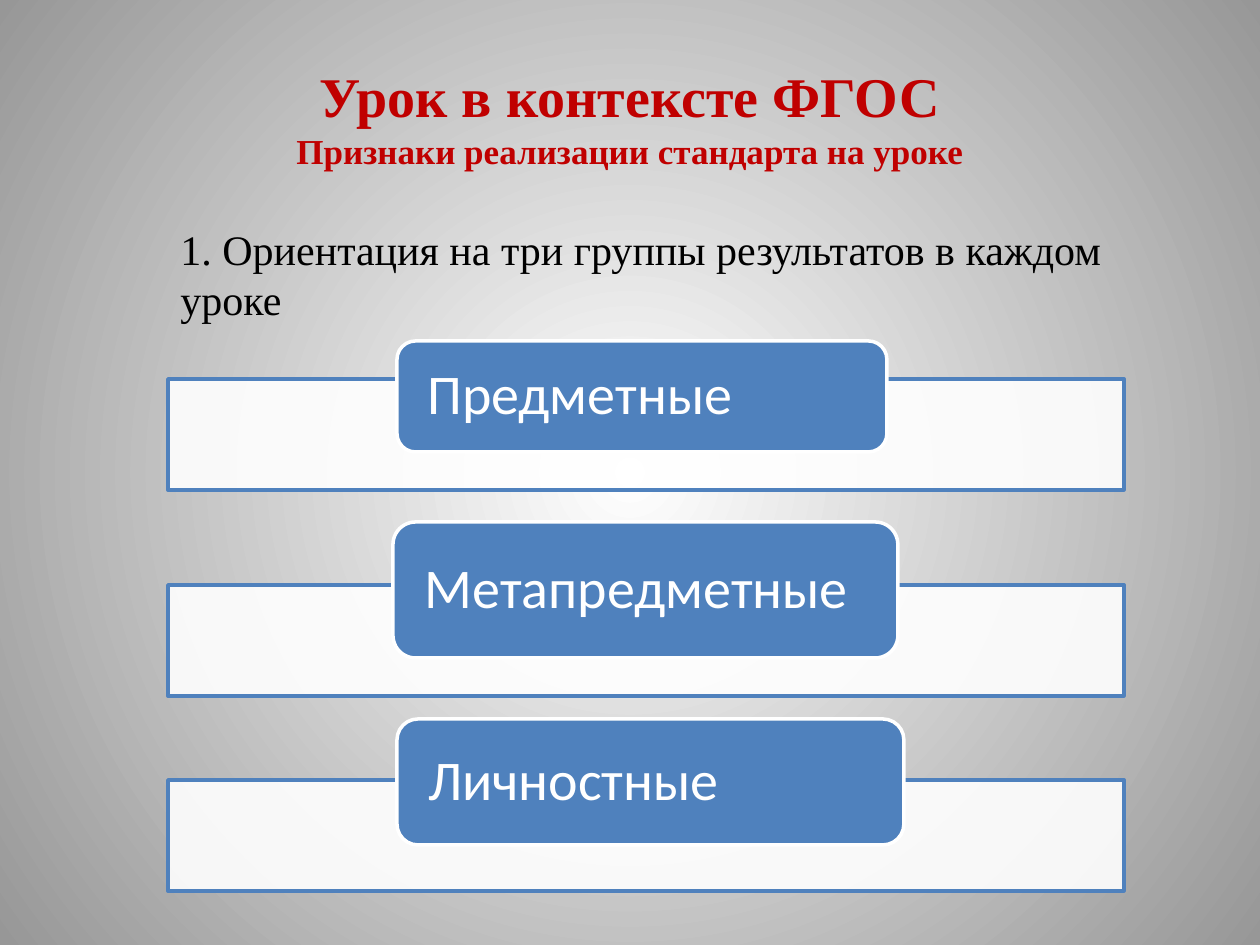
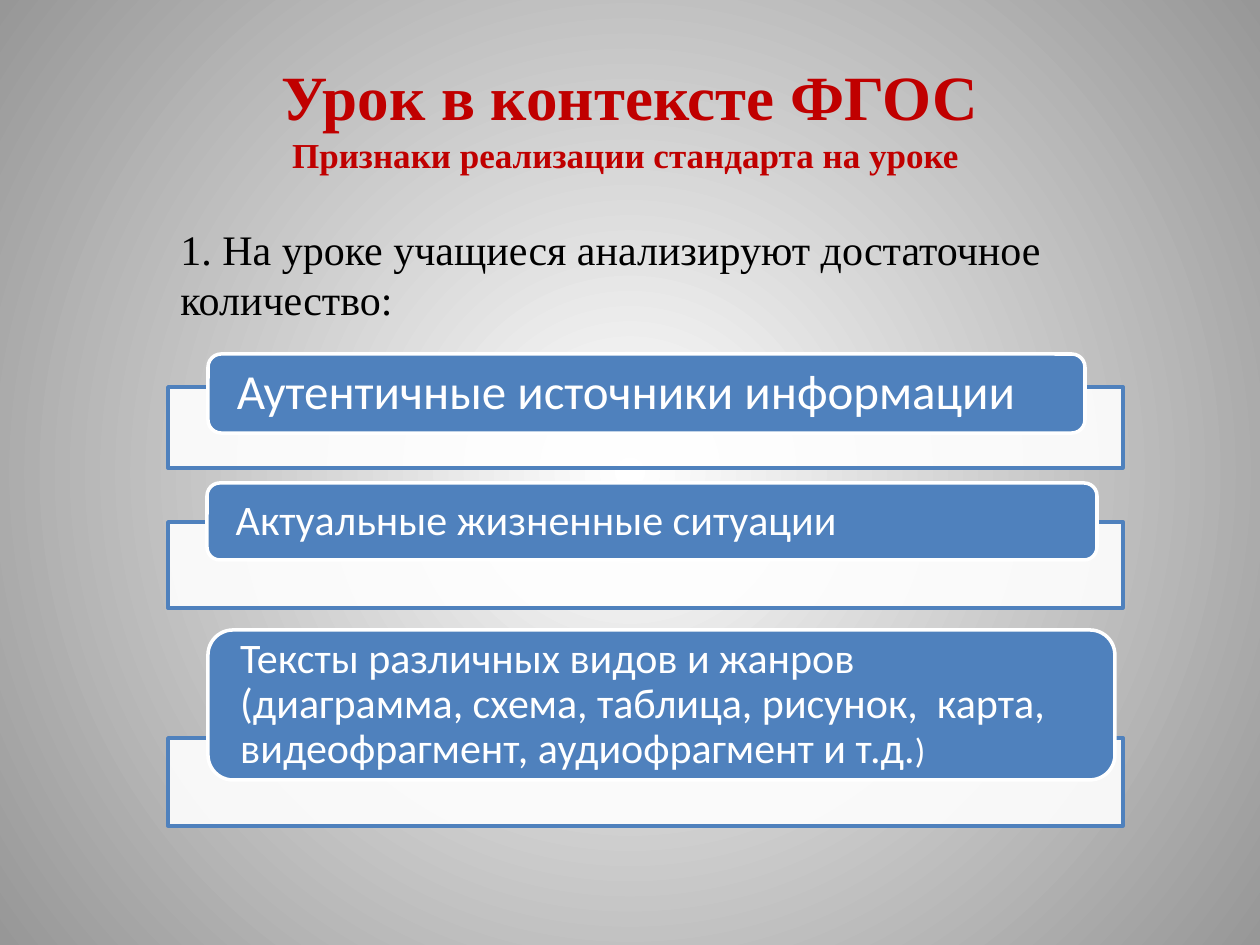
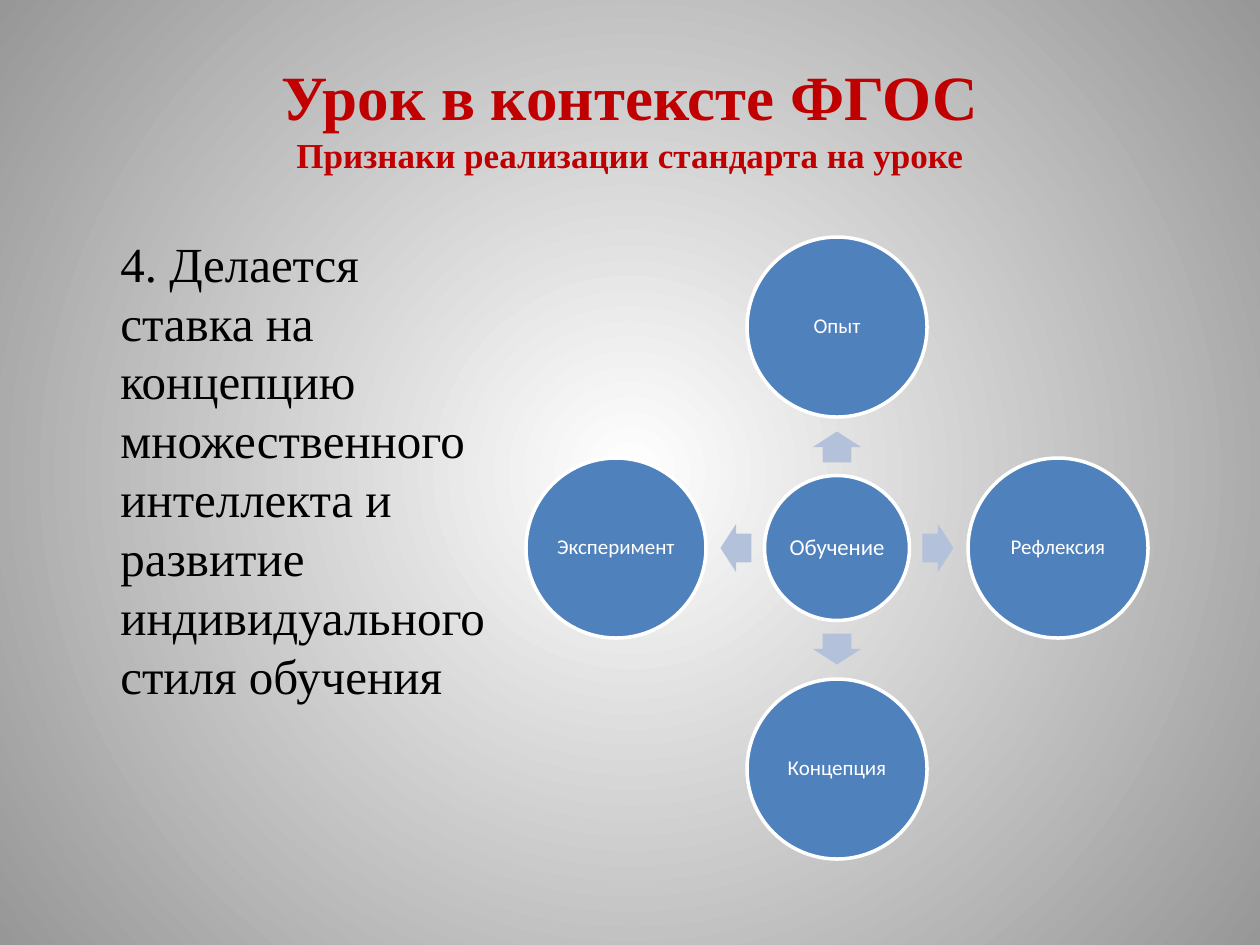
"""Build three slides on the signs of the standard in a lesson."""
from copy import deepcopy
from pptx import Presentation
from pptx.dml.color import RGBColor
from pptx.enum.shapes import MSO_SHAPE
from pptx.enum.text import MSO_ANCHOR, PP_ALIGN
from pptx.oxml.ns import qn
from pptx.util import Pt
from lxml import etree

RECT, ROUND = MSO_SHAPE.RECTANGLE, MSO_SHAPE.ROUNDED_RECTANGLE
OVAL, ARROW = MSO_SHAPE.OVAL, MSO_SHAPE.RIGHT_ARROW
LEFT, CENTER = PP_ALIGN.LEFT, PP_ALIGN.CENTER
TOP, MIDDLE = MSO_ANCHOR.TOP, MSO_ANCHOR.MIDDLE
PX = 914400 / 126
SERIF, SANS = "Times New Roman", "Calibri"
COLORS = {"white": "FFFFFF", "edge": "979797", "red": "C00000",
          "blue": "4F81BD", "pale": "B3C1DB", "black": "000000"}

HEAD = "Урок в контексте ФГОС"
SUB = "Признаки реализации стандарта на уроке"
LISTS = [
    {"title": [(HEAD, 32), (SUB, 20)],
     "lead": "1. Ориентация на три группы результатов в каждом уроке",
     "width": 956,
     "rows": [
         ((379, 111), (397, 341, 490, 111), [("Предметные", 32)]),
         ((585, 111), (393, 522, 505, 136), [("Метапредметные", 32)]),
         ((780, 111), (397, 719, 507, 126), [("Личностные", 32)])]},
    {"title": [(HEAD, 36), (SUB + " ", 20)],
     "lead": "1. На уроке учащиеся анализируют достаточное количество:",
     "width": 955,
     "rows": [
         ((387, 81), (208, 354, 877, 79),
          [("Аутентичные источники информации", 28)]),
         ((522, 86), (207, 483, 890, 77),
          [("Актуальные жизненные ситуации", 24)]),
         ((738, 88), (208, 630, 907, 150),
          [("Тексты различных видов и жанров (диаграмма, схема, таблица, "
            "рисунок,  карта, видеофрагмент, аудиофрагмент и т.д.", 24),
           (")", 20)])]},
]
CYCLE = {
    "title": [(HEAD, 36), (SUB, 20)],
    "lead": "4. Делается ставка на концепцию множественного интеллекта "
            "и развитие индивидуального стиля обучения",
    "hub": "Обучение",
    "nodes": [("Опыт", 0, -1, 270), ("Рефлексия", 1, 0, 0),
              ("Концепция", 0, 1, 90), ("Эксперимент", -1, 0, 180)],
}
HUB_X, HUB_Y, HUB_D = 837, 548, 145
NODE_D, NODE_GAP = 180, 221
ARROW_W, ARROW_H, ARROW_GAP = 31, 48, 101


def rgb(name):
    """Return a named colour."""
    return RGBColor.from_string(COLORS[name])


def emu(*vals):
    """Turn px lengths into EMU."""
    return [round(v * PX) for v in vals]


def write(shape, runs, font=SANS, color="white", bold=False, align=LEFT,
          anchor=MIDDLE, pads=None, space=None, split=False):
    """Fill a shape with runs of (text, size), split into lines if asked."""
    frame = shape.text_frame
    frame.word_wrap = True
    frame.vertical_anchor = anchor
    if pads:
        (frame.margin_left, frame.margin_top,
         frame.margin_right, frame.margin_bottom) = emu(*pads)
    para = frame.paragraphs[0]
    para.alignment = align
    if space:
        para.line_spacing = space
    for i, (text, size) in enumerate(runs):
        run = para.add_run()
        run.text = text
        run.font.size = Pt(size)
        run.font.name = font
        run.font.bold = bold
        run.font.color.rgb = rgb(color)
        if split and i < len(runs) - 1:
            para.add_line_break()
            para._p[-1].append(deepcopy(run._r.rPr))


def draw(slide, kind, box, fill, line=None, alpha=None):
    """Add a flat preset shape."""
    shape = slide.shapes.add_shape(kind, *emu(*box))
    shape.shadow.inherit = False
    shape.fill.solid()
    shape.fill.fore_color.rgb = rgb(fill)
    if alpha:
        tint = shape._element.spPr.find(".//" + qn("a:srgbClr"))
        etree.SubElement(tint, qn("a:alpha"), val=str(alpha * 1000))
    if line:
        shape.line.color.rgb = rgb(line)
        shape.line.width = Pt(2)
    else:
        shape.line.fill.background()
    return shape


def disc(slide, x, y, size, text, points):
    """Add a labelled circle around a centre."""
    box = (x - size / 2, y - size / 2, size, size)
    shape = draw(slide, OVAL, box, "blue", "white")
    write(shape, [(text, points)], align=CENTER, pads=(2, 2, 2, 2), space=0.9)


def start(prs, data, box, size):
    """Add a slide with its title and lead text."""
    slide = prs.slides.add_slide(prs.slide_layouts[5])
    title = slide.shapes.title
    title.left, title.top, title.width, title.height = emu(63, 38, 1134, 157)
    write(title, data["title"], font=SERIF, color="red", bold=True,
          align=CENTER, split=True)
    lead = slide.shapes.add_textbox(*emu(*box))
    write(lead, [(data["lead"], size)], font=SERIF, color="black", anchor=TOP)
    return slide


def paint(master):
    """Give the master a round gradient."""
    fill = master.background.fill
    fill.gradient()
    for stop, name in zip(fill.gradient_stops, ("white", "edge")):
        stop.color.rgb = rgb(name)
    grad = master._element.find(".//" + qn("a:gradFill"))
    grad.remove(grad.find(qn("a:lin")))
    ring = etree.SubElement(grad, qn("a:path"))
    ring.set("path", "circle")
    etree.SubElement(ring, qn("a:fillToRect"),
                     {side: "50000" for side in "ltrb"})


def main():
    """Build and save the slides."""
    prs = Presentation()
    prs.slide_width, prs.slide_height = emu(1260, 945)
    paint(prs.slide_master)

    for data in LISTS:
        slide = start(prs, data, (168, 217, 955, 115), 24)
        for (top, high), tab, runs in data["rows"]:
            draw(slide, RECT, (168, top, data["width"], high),
                 "white", "blue", alpha=90)
            label = draw(slide, ROUND, tab, "blue", "white")
            write(label, runs, pads=(25, 0, 25, 0), space=0.9)

    slide = start(prs, CYCLE, (108, 227, 394, 488), 28)
    disc(slide, HUB_X, HUB_Y, HUB_D, CYCLE["hub"], 13)
    for text, dx, dy, turn in CYCLE["nodes"]:
        x = HUB_X + dx * ARROW_GAP - ARROW_W / 2
        y = HUB_Y + dy * ARROW_GAP - ARROW_H / 2
        arrow = draw(slide, ARROW, (x, y, ARROW_W, ARROW_H), "pale")
        arrow.adjustments[0], arrow.adjustments[1] = 0.6, 0.5
        arrow.rotation = turn
        disc(slide, HUB_X + dx * NODE_GAP, HUB_Y + dy * NODE_GAP,
             NODE_D, text, 12)

    prs.save("out.pptx")


if __name__ == "__main__":
    main()
